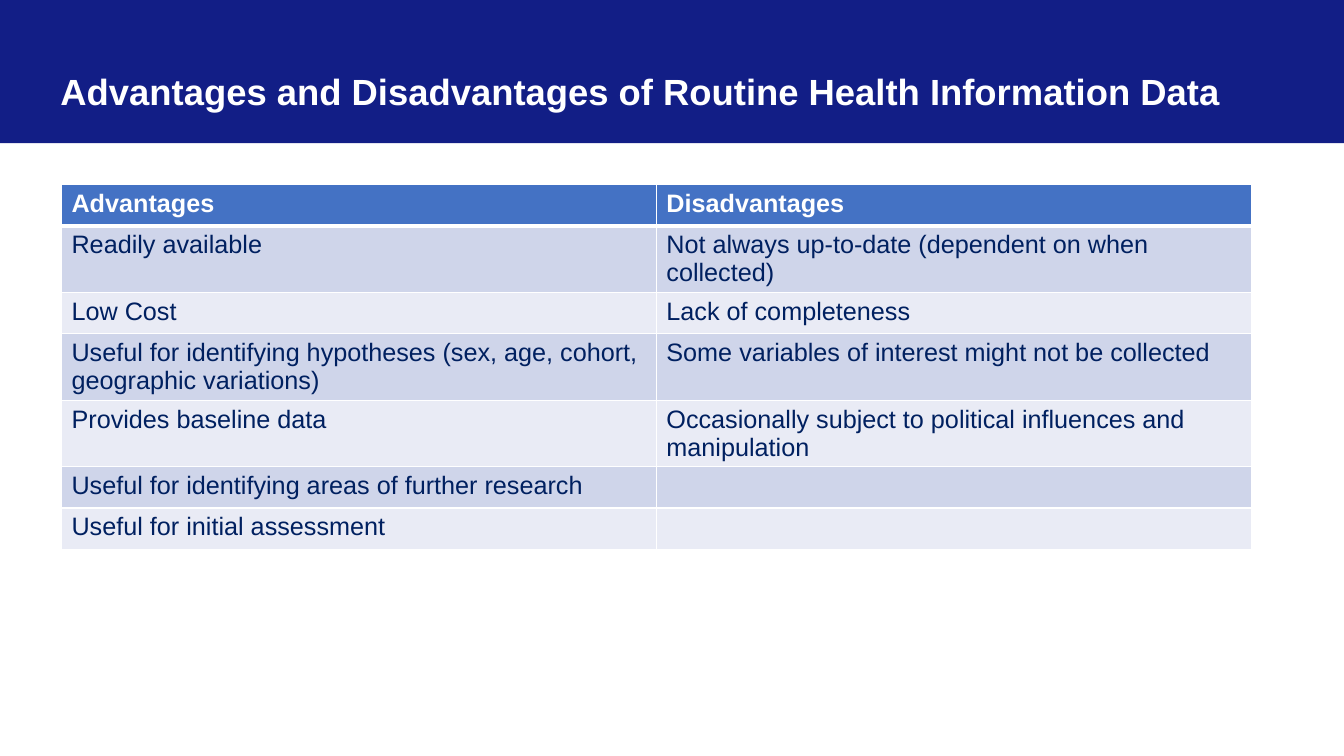
from lxml import etree
from pptx import Presentation
from pptx import util as u
from pptx.dml.color import RGBColor
from pptx.enum import shapes, text
from pptx.oxml import ns

WHITE = RGBColor(0xFF, 0xFF, 0xFF)
BANNER_BLUE = RGBColor(0x12, 0x1E, 0x86)
HEADER_BLUE = RGBColor(0x44, 0x72, 0xC4)
TEXT_NAVY = RGBColor(0x00, 0x20, 0x60)
BANDS = [RGBColor(0xE9, 0xEB, 0xF5), RGBColor(0xCF, 0xD5, 0xEA)]

ROWS = [
    ("Advantages", "Disadvantages"),
    ("Readily available", "Not always up-to-date (dependent on when collected)"),
    ("Low Cost", "Lack of completeness"),
    ("Useful for identifying hypotheses (sex, age, cohort, geographic variations)",
     "Some variables of interest might not be collected"),
    ("Provides baseline data",
     "Occasionally subject to political influences and manipulation"),
    ("Useful for identifying areas of further research", ""),
    ("Useful for initial assessment", ""),
]
COLUMN_WIDTH, ROW_HEIGHT = u.Inches(5.9), u.Inches(0.41)


def write(para, words, size, color, bold):
    span = para.add_run()
    span.text = words
    for name, value in {"name": "Arial", "size": u.Pt(size), "bold": bold}.items():
        setattr(span.font, name, value)
    span.font.color.rgb = color


def add_border(cell, side, points):
    """Draw a white line on one side (L, R, T or B) of a table cell."""
    line = etree.SubElement(cell._tc.get_or_add_tcPr(), ns.qn("a:ln" + side),
                            w=str(u.Pt(points)))
    fill = etree.SubElement(line, ns.qn("a:solidFill"))
    etree.SubElement(fill, ns.qn("a:srgbClr"), val=str(WHITE))


deck = Presentation()
deck.slide_width, deck.slide_height = u.Inches(13.33), u.Inches(7.5)
page = deck.slides.add_slide(deck.slide_layouts[6])

# Table of advantages and disadvantages
table = page.shapes.add_table(
    len(ROWS), 2, u.Inches(0.61), u.Inches(1.83),
    2 * COLUMN_WIDTH, len(ROWS) * ROW_HEIGHT).table
for column in table.columns:
    column.width = COLUMN_WIDTH
for r, row in enumerate(ROWS):
    table.rows[r].height = ROW_HEIGHT
    header = r == 0
    for c, words in enumerate(row):
        cell = table.cell(r, c)
        for side in "LRTB":
            thick = (header and side == "B") or (r == 1 and side == "T")
            add_border(cell, side, 3 if thick else 1)
        cell.fill.solid()
        cell.fill.fore_color.rgb = HEADER_BLUE if header else BANDS[r % 2]
        if words:
            write(cell.text_frame.paragraphs[0], words, 18,
                  WHITE if header else TEXT_NAVY, header)

# Title banner
banner = page.shapes.add_shape(
    shapes.MSO_SHAPE.RECTANGLE, 0, 0, deck.slide_width, u.Inches(1.42))
banner.shadow.inherit = False
banner.fill.solid()
banner.fill.fore_color.rgb = BANNER_BLUE
banner.line.fill.background()
frame_format = {
    "word_wrap": True, "vertical_anchor": text.MSO_ANCHOR.BOTTOM,
    "margin_left": u.Inches(0.6), "margin_top": u.Inches(0.05),
    "margin_right": u.Inches(0.1), "margin_bottom": u.Inches(0.3),
}
for name, value in frame_format.items():
    setattr(banner.text_frame, name, value)
title = banner.text_frame.paragraphs[0]
title.alignment = text.PP_ALIGN.LEFT
title.line_spacing = 0.9
write(title, "Advantages and Disadvantages of Routine Health Information Data",
      26, WHITE, True)

deck.save("out.pptx")
